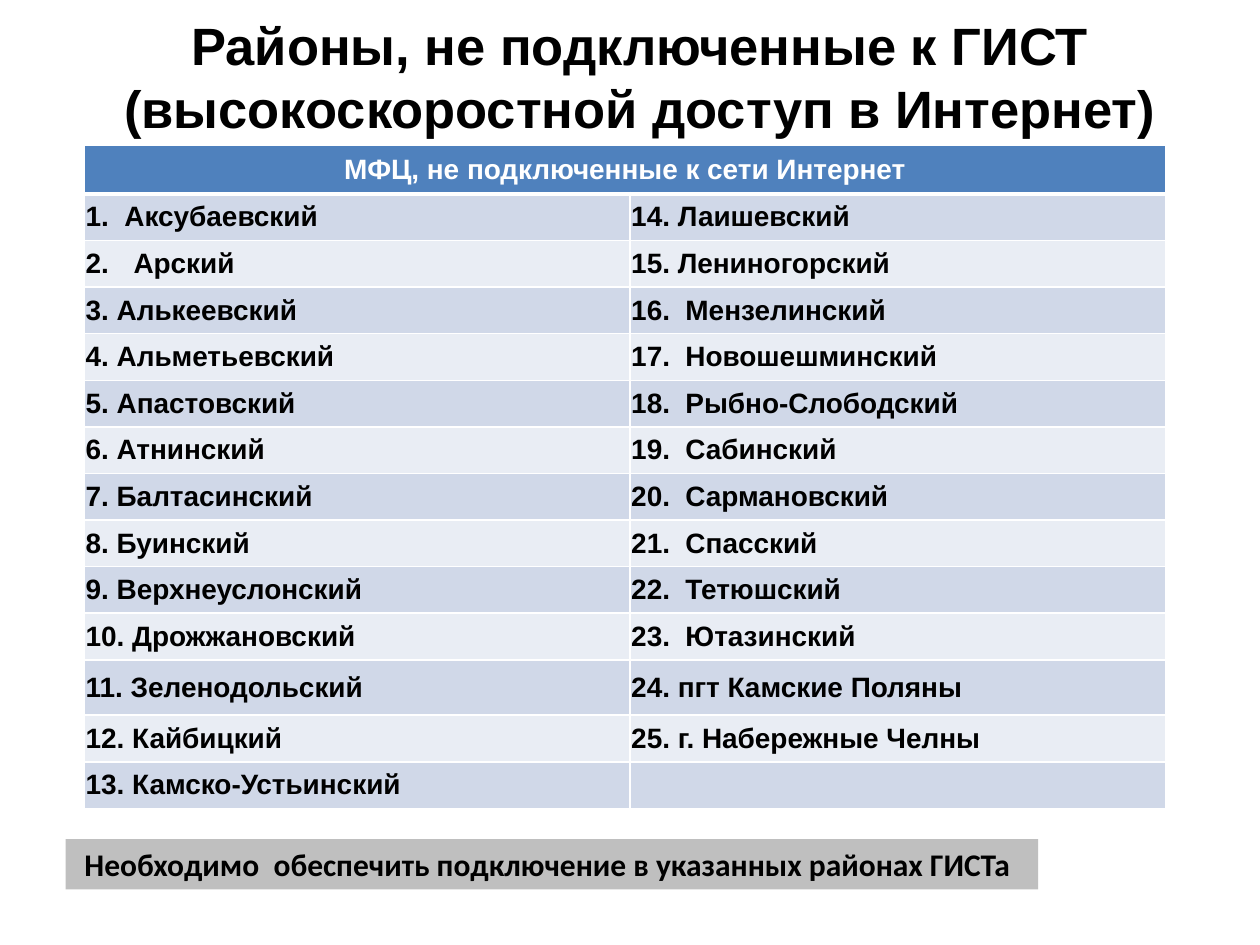
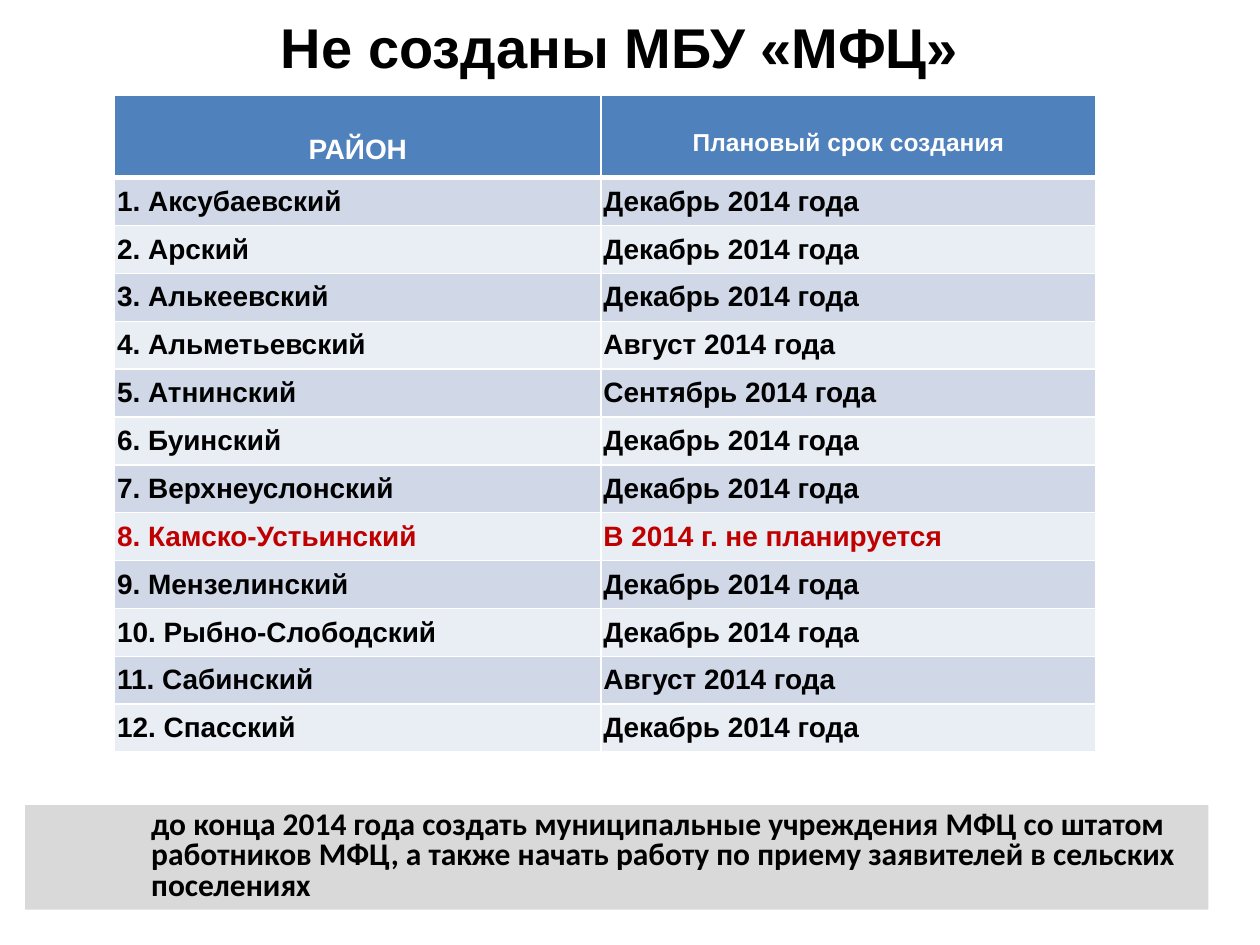
from lxml import etree
from pptx import Presentation
from pptx.dml.color import RGBColor
from pptx.enum.shapes import MSO_SHAPE
from pptx.enum.text import MSO_ANCHOR, PP_ALIGN
from pptx.oxml.ns import qn
from pptx.util import Inches, Pt

LEFT, CENTER = PP_ALIGN.LEFT, PP_ALIGN.CENTER
TOP, MIDDLE = MSO_ANCHOR.TOP, MSO_ANCHOR.MIDDLE
RECTANGLE = MSO_SHAPE.RECTANGLE
TITLE_ONLY = 5

THEME = {
    "heading_font": "Arial", "note_font": "Calibri",
    "black": "000000", "white": "FFFFFF", "red": "C00000",
    "header": "4F81BD", "bands": ("D0D8E8", "E9EDF4"),
    "body_size": 16, "small_size": 14, "note_size": 18,
    "thin": 1, "thick": 3,
}


def write(tf, text, size=THEME["body_size"], color=THEME["black"], font=THEME["heading_font"],
          align=LEFT, anchor=MIDDLE, spacing=None, margins=(0.1, 0.05, 0.1, 0.05)):
    tf.word_wrap = True
    tf.vertical_anchor = anchor
    tf.margin_left, tf.margin_top, tf.margin_right, tf.margin_bottom = map(Inches, margins)
    p = tf.paragraphs[0]
    p.alignment = align
    if spacing:
        p.line_spacing = spacing
    r = p.add_run()
    r.text = text
    r.font.name = font
    r.font.size = Pt(size)
    r.font.bold = True
    r.font.color.rgb = RGBColor.from_string(color)
    return p


def add_grid(s, left, top, col_widths, row_heights):
    frame = s.shapes.add_table(len(row_heights), len(col_widths), Inches(left), Inches(top),
                               Inches(sum(col_widths)), Inches(sum(row_heights)))
    table = frame.table
    for column, width in zip(table.columns, col_widths):
        column.width = Inches(width)
    for i, (row, height) in enumerate(zip(table.rows, row_heights)):
        row.height = Inches(height)
        for cell in row.cells:
            cell.margin_left = cell.margin_top = cell.margin_right = cell.margin_bottom = 0
            tcPr = cell._tc.get_or_add_tcPr()
            for side in ("lnL", "lnR", "lnT", "lnB"):
                heavy = (i == 0 and side == "lnB") or (i == 1 and side == "lnT")
                width = THEME["thick"] if heavy else THEME["thin"]
                ln = etree.SubElement(tcPr, qn(f"a:{side}"), w=str(Pt(width)))
                fill = etree.SubElement(ln, qn("a:solidFill"))
                etree.SubElement(fill, qn("a:srgbClr"), val=THEME["white"])
            cell.fill.solid()
            color = THEME["header"] if i == 0 else THEME["bands"][(i - 1) % 2]
            cell.fill.fore_color.rgb = RGBColor.from_string(color)
    return table


prs = Presentation()
prs.slide_width, prs.slide_height = Inches(10), Inches(7.5)

pages = [
    {"title": "Районы, не подключенные к ГИСТ (высокоскоростной доступ в Интернет)",
     "title_box": (0.83, 0.21, 8.5, 0.79), "title_size": 30,
     "note": "Необходимо  обеспечить подключение в указанных районах ГИСТа",
     "note_box": (0.52, 6.66, 7.72, 0.4), "note_fill": "BFBFBF",
     "note_format": {"margins": (0.15, 0.05, 0.05, 0.05)}},
    {"title": "Не созданы МБУ «МФЦ»",
     "title_box": (0.67, -0.03, 8.5, 0.79), "title_size": 32,
     "note": "до конца 2014 года создать муниципальные учреждения МФЦ со штатом "
             "работников МФЦ, а также начать работу по приему заявителей в сельских поселениях",
     "note_box": (0.2, 6.39, 9.39, 0.83), "note_fill": "D9D9D9",
     "note_format": {"margins": (1, 0.05, 0.1, 0.05), "spacing": 0.8}},
]

slides = []
for page in pages:
    s = prs.slides.add_slide(prs.slide_layouts[TITLE_ONLY])
    slides.append(s)
    title = s.shapes.title
    title.left, title.top, title.width, title.height = map(Inches, page["title_box"])
    write(title.text_frame, page["title"], size=page["title_size"], align=CENTER)

    sp = s.shapes.add_shape(RECTANGLE, *map(Inches, page["note_box"]))
    sp.shadow.inherit = False
    sp.fill.solid()
    sp.fill.fore_color.rgb = RGBColor.from_string(page["note_fill"])
    sp.line.fill.background()
    write(sp.text_frame, page["note"], size=THEME["note_size"], font=THEME["note_font"],
          anchor=TOP, **page["note_format"])

districts_left = [
    "1.  Аксубаевский", "Арский", "3. Алькеевский", "4. Альметьевский", "5. Апастовский",
    "6. Атнинский", "7. Балтасинский", "8. Буинский", "9. Верхнеуслонский",
    "10. Дрожжановский", "11. Зеленодольский", "12. Кайбицкий", "13. Камско-Устьинский",
]
districts_right = [
    "14. Лаишевский", "15. Лениногорский", "16.  Мензелинский", "17.  Новошешминский",
    "18.  Рыбно-Слободский", "19.  Сабинский", "20.  Сармановский", "21.  Спасский",
    "22.  Тетюшский", "23.  Ютазинский", "24. пгт Камские Поляны", "25. г. Набережные Челны",
]
table = add_grid(slides[0], 0.67, 1.15, [4.33, 4.25], [0.39] + [0.37] * 10 + [0.44] + [0.37] * 2)
table.cell(0, 0).merge(table.cell(0, 1))
header = table.cell(0, 0)
header.vertical_anchor = MIDDLE
write(header.text_frame, "МФЦ, не подключенные к сети Интернет", color=THEME["white"], align=CENTER)
for col, names in enumerate((districts_left, districts_right)):
    for row, name in enumerate(names, 1):
        cell = table.cell(row, col)
        cell.vertical_anchor = MIDDLE
        cell.margin_left = Inches(0.01)
        p = write(cell.text_frame, name)
        if name == "Арский":
            pPr = p._p.get_or_add_pPr()
            pPr.set("marL", str(Inches(0.38)))
            pPr.set("indent", str(-Inches(0.38)))
            etree.SubElement(pPr, qn("a:buFont"), typeface=THEME["heading_font"])
            etree.SubElement(pPr, qn("a:buAutoNum"), type="arabicPeriod", startAt="2")

december, august = "Декабрь 2014 года", "Август 2014 года"
not_planned = "В 2014 г. не планируется"
schedule = [
    ("Аксубаевский", december), ("Арский", december), ("Алькеевский", december),
    ("Альметьевский", august), ("Атнинский", "Сентябрь 2014 года"), ("Буинский", december),
    ("Верхнеуслонский", december), ("Камско-Устьинский", not_planned),
    ("Мензелинский", december), ("Рыбно-Слободский", december), ("Сабинский", august),
    ("Спасский", december),
]
table = add_grid(slides[1], 0.91, 0.76, [3.86, 3.93], [0.65] + [0.38] * len(schedule))
headers = [("РАЙОН", THEME["body_size"], 0.31),
           ("Плановый срок создания", THEME["small_size"], 0.27)]
for col, (text, size, margin_top) in enumerate(headers):
    cell = table.cell(0, col)
    cell.vertical_anchor = TOP
    cell.margin_top = Inches(margin_top)
    write(cell.text_frame, text, size=size, color=THEME["white"], align=CENTER, anchor=TOP,
          margins=(0.1, margin_top, 0.1, 0.05))
for row, (district, term) in enumerate(schedule, 1):
    color = THEME["red"] if term == not_planned else THEME["black"]
    for col, text in enumerate((f"{row}. {district}", term)):
        cell = table.cell(row, col)
        cell.vertical_anchor = MIDDLE
        cell.margin_left = Inches(0.02)
        write(cell.text_frame, text, color=color)

prs.save("out.pptx")
